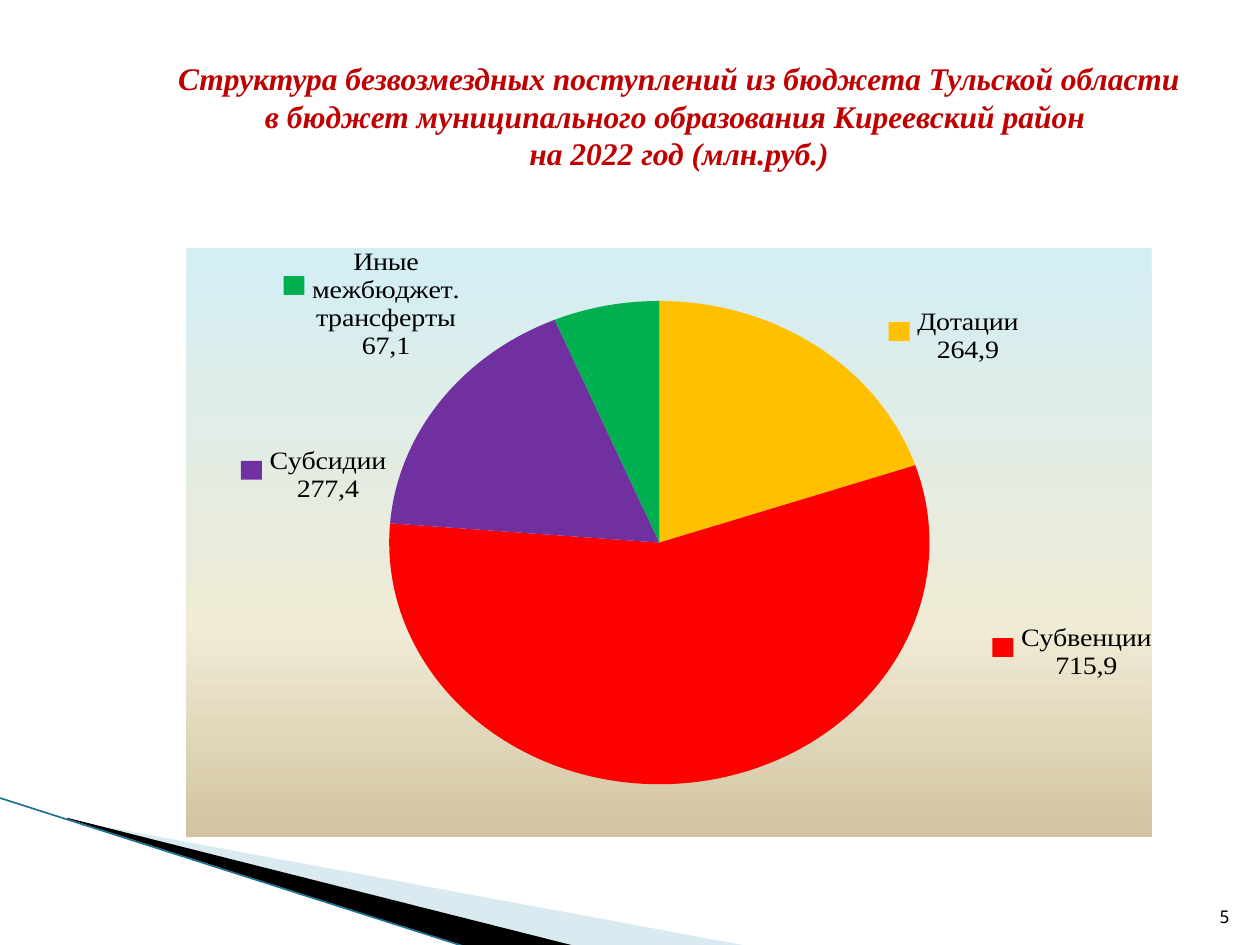
from lxml.etree import SubElement
from pptx import Presentation
from pptx.chart.data import CategoryChartData
from pptx.dml.color import RGBColor
from pptx.enum.chart import XL_CHART_TYPE, XL_LABEL_POSITION
from pptx.enum.shapes import MSO_CONNECTOR
from pptx.enum.text import MSO_ANCHOR, PP_ALIGN
from pptx.oxml import parse_xml
from pptx.oxml.ns import nsdecls, qn
from pptx.util import Pt

COLOURS = {"title": "C00000", "text": "000000", "wedge": "A0CBDC", "blade": "000000",
           "edge": "1F7391"}
TITLE = ("Структура безвозмездных поступлений из бюджета Тульской области\v"
         "в бюджет муниципального образования Киреевский район \v"
         "на 2022 год (млн.руб.)")
SERIES = "Столбец1"
SLICES = [  # value, colour, label, label shift as a share of the chart
    (238, "FFC000", "Дотации\n264,9", (0.07, 0.04)),
    (678, "FF0000", "Субвенции\n715,9", (0.36, -0.28)),
    (209, "7030A0", "Субсидии\n277,4", (-0.05, 0.18)),
    (76, "00B050", "Иные межбюджет. трансферты\n67,1", (-0.15, 0.1)),
]
BACKDROP = [(0, "D3EEF5"), (65, "F0EBD5"), (100, "D1C39F")]
PIE = {"x": 0.2, "y": 0.09, "w": 0.58, "h": 0.82}
WEDGE = [(39.6, 468.7), (428.4, 540.7), (328.3, 540.7), (39.6, 468)]
BLADE = [(38.2, 467.3), (329, 540.7), (267.8, 541.4), (38.9, 468)]
EDGE = [(-0.7, 455.8), (267.1, 541.4)]
PAGE_NUMBER = "5"


def colour(name):
    return RGBColor.from_string(COLOURS.get(name, name))


def format_text(frame, font, size, align, name="text", bold=None, italic=None):
    for para in frame.paragraphs:
        para.alignment = align
        for span in para.runs:
            span.font.name, span.font.size = font, Pt(size)
            span.font.bold, span.font.italic = bold, italic
            span.font.color.rgb = colour(name)


def add_title(page):
    box = page.shapes.title
    box.left, box.top, box.width, box.height = Pt(84.24), Pt(16.56), Pt(607.68), Pt(78.48)
    frame = box.text_frame
    frame.text = TITLE
    frame.vertical_anchor = MSO_ANCHOR.MIDDLE
    frame.margin_top, frame.margin_bottom = Pt(24), Pt(3.6)
    format_text(frame, "Times New Roman", 18, PP_ALIGN.CENTER, "title", True, True)


def add_outline(page, points, name, opacity=100):
    corners = [(Pt(x), Pt(y)) for x, y in points]
    builder = page.shapes.build_freeform(*corners[0])
    builder.add_line_segments(corners[1:], close=True)
    shape = builder.convert_to_shape()
    shape.shadow.inherit = False
    shape.fill.solid()
    shape.fill.fore_color.rgb = colour(name)
    shape.line.fill.background()
    if opacity < 100:
        tint = shape.fill._xPr.find(qn("a:solidFill"))[0]
        SubElement(tint, qn("a:alpha"), val=str(opacity * 1000))


def add_edge(page):
    ends = [Pt(value) for point in EDGE for value in point]
    line = page.shapes.add_connector(MSO_CONNECTOR.STRAIGHT, *ends)
    line.line.color.rgb = colour("edge")
    line.line.width = Pt(0.95)
    SubElement(line._element.spPr, qn("a:effectLst"))


def manual_layout(places, inner=False):
    target = '<c:layoutTarget val="inner"/>' if inner else ""
    modes = '<c:xMode val="edge"/><c:yMode val="edge"/>' if inner else ""
    values = "".join(f'<c:{key} val="{value}"/>' for key, value in places.items())
    return parse_xml(f'<c:layout {nsdecls("c")}><c:manualLayout>{target}{modes}{values}'
                     '</c:manualLayout></c:layout>')


def add_labels(series):
    for index, (_, tint, text, (across, down)) in enumerate(SLICES):
        point = series.points[index]
        point.format.fill.solid()
        point.format.fill.fore_color.rgb = colour(tint)
        point.format.line.fill.background()
        label = point.data_label
        label.text_frame.text = text
        format_text(label.text_frame, "Times New Roman", 16, PP_ALIGN.CENTER, bold=False)
        label.position = XL_LABEL_POSITION.OUTSIDE_END
        element = series._element.findall(".//" + qn("c:dLbl"))[index]
        element.find(qn("c:idx")).addnext(manual_layout({"x": across, "y": down}))
        for flag in ("c:showLegendKey", "c:showVal", "c:showSerName"):
            element.find(qn(flag)).set("val", "1")
    labels = series.data_labels
    labels.show_value = labels.show_series_name = True
    labels.number_format, labels.number_format_is_linked = "#,##0.00", False
    labels.font.size, labels.font.bold = Pt(20), True
    for leader in series._element.iter(qn("c:showLeaderLines")):
        leader.set("val", "0")


def add_pie(page):
    data = CategoryChartData()
    data.categories = [str(number) for number in range(1, len(SLICES) + 1)]
    data.add_series(SERIES, [item[0] for item in SLICES])
    chart = page.shapes.add_chart(XL_CHART_TYPE.PIE, Pt(106.56), Pt(106.56),
                                  Pt(551.52), Pt(376.56), data).chart
    chart.has_title = chart.has_legend = False
    chart.font.name, chart.font.size = "Noto Sans Mono", Pt(10)
    chart.font.color.rgb = colour("text")
    chart.plots[0].vary_by_categories = True

    space = chart._chartSpace
    stops = "".join(f'<a:gs pos="{at * 1000}"><a:srgbClr val="{tint}"/></a:gs>'
                    for at, tint in BACKDROP)
    space.find(qn("c:chart")).addnext(parse_xml(
        f'<c:spPr {nsdecls("c", "a")}><a:gradFill><a:gsLst>{stops}</a:gsLst>'
        '<a:lin ang="5400000" scaled="0"/></a:gradFill><a:ln><a:noFill/></a:ln></c:spPr>'))
    area = space.find(".//" + qn("c:plotArea"))
    for layout in area.findall(qn("c:layout")):
        area.remove(layout)
    area.insert(0, manual_layout(PIE, inner=True))
    add_labels(chart.plots[0].series[0])


def add_page_number(page):
    frame = page.shapes.add_textbox(Pt(681.12), Pt(504.72), Pt(28.8), Pt(28.8)).text_frame
    frame.word_wrap = True
    frame.vertical_anchor = MSO_ANCHOR.BOTTOM
    frame.text = PAGE_NUMBER
    format_text(frame, "Noto Sans Mono", 10, PP_ALIGN.RIGHT)


def main():
    """Build the slide on the structure of budget transfers."""
    deck = Presentation()
    deck.slide_width, deck.slide_height = Pt(720), Pt(540)
    page = deck.slides.add_slide(deck.slide_layouts[5])
    add_outline(page, WEDGE, "wedge", opacity=40)
    add_outline(page, BLADE, "blade")
    add_edge(page)
    add_pie(page)
    add_page_number(page)
    add_title(page)
    deck.save("out.pptx")


if __name__ == "__main__":
    main()
